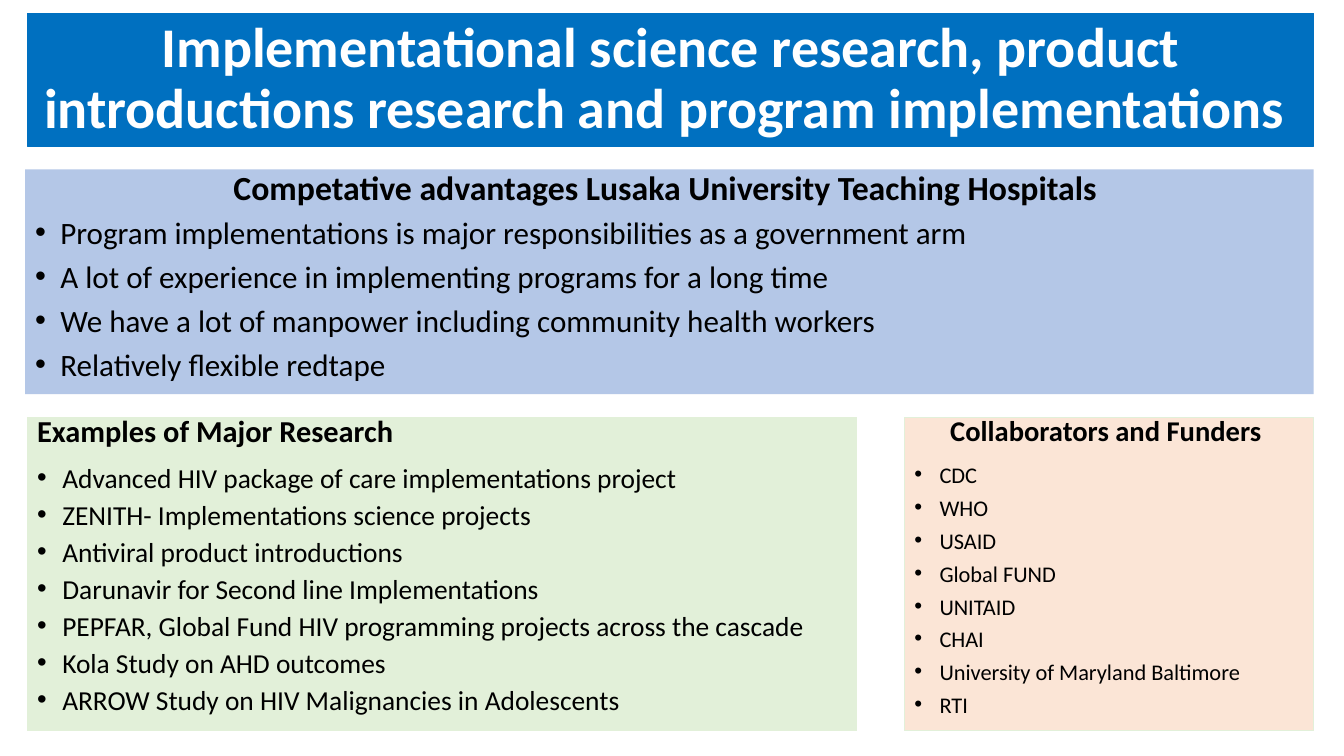
from pptx import Presentation
from pptx.dml.color import RGBColor
from pptx.enum import shapes, text
from pptx.oxml import ns
from pptx.util import Inches, Pt
from lxml import etree

FONT = "Calibri"
WHITE = RGBColor(0xFF, 0xFF, 0xFF)
BLACK = RGBColor(0x00, 0x00, 0x00)
BLUE = RGBColor(0x00, 0x70, 0xC0)
LIGHT_BLUE = RGBColor(0xB4, 0xC7, 0xE7)
GREEN = RGBColor(0xE2, 0xF0, 0xD9)
PEACH = RGBColor(0xFB, 0xE5, 0xD6)
LEFT, CENTER = text.PP_ALIGN.LEFT, text.PP_ALIGN.CENTER

ADVANTAGES = [
    "Program implementations is major responsibilities as a government arm",
    "A lot of experience in implementing programs for a long time",
    "We have a lot of manpower including community health workers",
    "Relatively flexible redtape",
]
RESEARCH = [
    "Advanced HIV package of care implementations project",
    "ZENITH- Implementations science projects",
    "Antiviral product introductions",
    "Darunavir for Second line Implementations",
    "PEPFAR, Global Fund HIV programming projects across the cascade",
    "Kola Study on AHD outcomes",
    "ARROW Study on HIV Malignancies in Adolescents",
]
COLLABORATORS = [
    "CDC", "WHO", "USAID", "Global FUND", "UNITAID", "CHAI",
    "University of Maryland Baltimore", "RTI",
]


def add_panel(slide, box, fill, line=None, anchor=text.MSO_ANCHOR.TOP):
    sp = slide.shapes.add_shape(shapes.MSO_SHAPE.RECTANGLE, *map(Inches, box))
    sp.shadow.inherit = False
    sp.fill.solid()
    sp.fill.fore_color.rgb = fill
    if line is None:
        sp.line.fill.background()
    else:
        sp.line.color.rgb = line
        sp.line.width = Pt(0.75)
    tf = sp.text_frame
    tf.word_wrap = True
    tf.vertical_anchor = anchor
    return tf


def write(p, words, size, spacing, before=0, after=0, align=LEFT,
          bold=False, color=BLACK):
    p.text = words
    p.alignment = align
    p.line_spacing = spacing
    p.space_before = Pt(before)
    p.space_after = Pt(after)
    font = p.runs[0].font
    font.name = FONT
    font.size = Pt(size)
    font.bold = bold
    font.color.rgb = color


def add_bullet(p):
    pPr = p._p.get_or_add_pPr()
    pPr.set("marL", str(Inches(0.25)))
    pPr.set("indent", str(-Inches(0.25)))
    etree.SubElement(pPr, ns.qn("a:buFont")).set("typeface", "Arial")
    etree.SubElement(pPr, ns.qn("a:buChar")).set("char", "•")


def add_list(tf, items, size, spacing):
    for item in items:
        p = tf.add_paragraph()
        write(p, item, size, spacing, before=10)
        add_bullet(p)


def main():
    prs = Presentation()
    prs.slide_width, prs.slide_height = Inches(13.33), Inches(7.5)
    slide = prs.slides.add_slide(prs.slide_layouts[6])

    tf = add_panel(slide, (0.27, 0.13, 12.76, 1.32), BLUE, BLUE,
                   text.MSO_ANCHOR.MIDDLE)
    write(tf.paragraphs[0],
          "Implementational science research, product introductions "
          "research and program implementations ",
          40, 0.9, align=CENTER, bold=True, color=WHITE)

    tf = add_panel(slide, (0.25, 1.68, 12.78, 2.23), LIGHT_BLUE)
    write(tf.paragraphs[0],
          "Competative advantages Lusaka University Teaching Hospitals ",
          24.1, 0.8, before=10, align=CENTER, bold=True)
    add_list(tf, ADVANTAGES, 22.2, 0.8)

    tf = add_panel(slide, (0.27, 4.14, 8.23, 3.11), GREEN, GREEN)
    write(tf.paragraphs[0], "Examples of Major Research",
          21.7, 0.7, before=4, after=6, bold=True)
    add_list(tf, RESEARCH, 19.6, 0.7)

    tf = add_panel(slide, (8.97, 4.14, 4.06, 3.11), PEACH, GREEN)
    write(tf.paragraphs[0], "Collaborators and Funders ",
          20.4, 0.7, before=4, after=6, align=CENTER, bold=True)
    add_list(tf, COLLABORATORS, 16, 0.7)

    prs.save("out.pptx")


if __name__ == "__main__":
    main()
